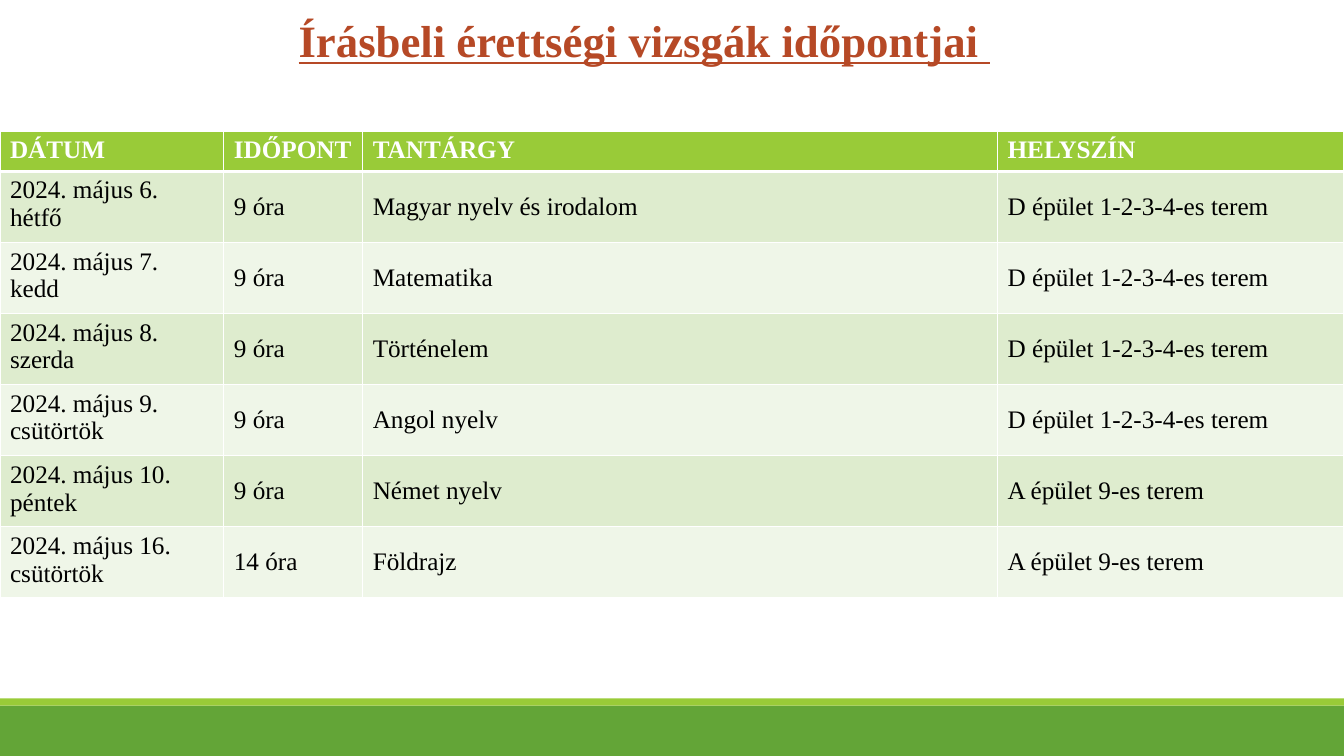
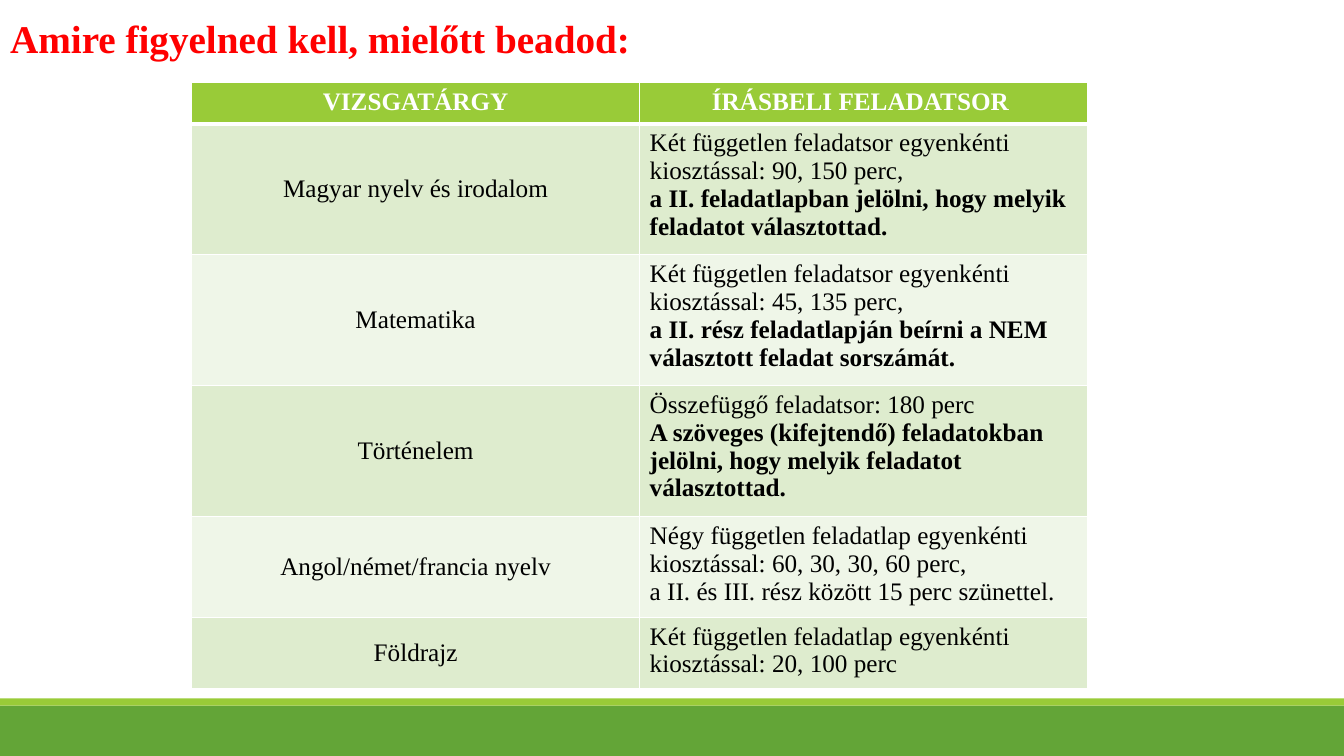
from dataclasses import dataclass

from pptx import Presentation
from pptx.dml.color import RGBColor
from pptx.enum.shapes import MSO_SHAPE
from pptx.enum.text import MSO_ANCHOR, MSO_AUTO_SIZE, PP_ALIGN
from pptx.oxml import parse_xml
from pptx.oxml.ns import nsdecls
from pptx.presentation import Presentation as Deck
from pptx.slide import Slide
from pptx.table import _Cell
from pptx.text.text import _Paragraph
from pptx.util import Cm, Pt


@dataclass(frozen=True)
class Theme:
    font: str = "Times New Roman"
    white: str = "FFFFFF"
    black: str = "000000"
    rust: str = "B64926"
    red: str = "FF0000"
    green: str = "63A537"
    lime: str = "99CB38"
    rows: tuple[str, str] = ("DEECCE", "EFF6E8")
    large: int = 32
    medium: int = 28
    body: int = 18
    thin: int = 1
    thick: int = 3


@dataclass(frozen=True)
class Band:
    top: float
    height: float
    color: str


@dataclass(frozen=True)
class Title:
    text: str
    box: tuple[float, float, float, float]
    size: int
    color: str
    after: int
    under: bool = False


@dataclass(frozen=True)
class Column:
    head: str
    width: float
    anchor: MSO_ANCHOR = MSO_ANCHOR.MIDDLE
    align: PP_ALIGN = PP_ALIGN.LEFT
    head_align: PP_ALIGN = PP_ALIGN.LEFT


@dataclass(frozen=True)
class Entry:
    """Cell text with an optional second paragraph, which may be bold."""
    text: str
    more: str = ""
    bold: bool = False


@dataclass(frozen=True)
class Grid:
    left: float
    top: float
    columns: list[Column]
    heights: list[float]
    rows: list[list[Entry]]


THEME = Theme()
WIDTH, HEIGHT = 33.87, 19.05
BANDS = [Band(17.78, 1.27, THEME.green), Band(17.6, 0.18, THEME.lime)]

DATES = Title("Írásbeli érettségi vizsgák időpontjai ", (7.27, 0, 18.4, 1.7),
              THEME.large, THEME.rust, after=10, under=True)
ADVICE = Title("Amire figyelned kell, mielőtt beadod:", (0, 0.05, 16.3, 1.52),
               THEME.medium, THEME.red, after=12)

HALL_D, HALL_A = "D épület 1-2-3-4-es terem", "A épület 9-es terem"
EXAMS = [
    (6, "hétfő", 9, "Magyar nyelv és irodalom", HALL_D),
    (7, "kedd", 9, "Matematika", HALL_D),
    (8, "szerda", 9, "Történelem", HALL_D),
    (9, "csütörtök", 9, "Angol nyelv", HALL_D),
    (10, "péntek", 9, "Német nyelv", HALL_A),
    (16, "csütörtök", 14, "Földrajz", HALL_A),
]
TIMES = Grid(
    0, 3.3,
    [Column("DÁTUM", 5.64, MSO_ANCHOR.TOP), Column("IDŐPONT", 3.5),
     Column("TANTÁRGY", 16), Column("HELYSZÍN", 8.73)],
    [1.02] + [1.79] * len(EXAMS),
    [[Entry(f"2024. május {day}.", name), Entry(f"{hour} óra"), Entry(topic), Entry(hall)]
     for day, name, hour, topic, hall in EXAMS],
)
PAPERS = Grid(
    4.83, 2.08,
    [Column("VIZSGATÁRGY", 11.29, align=PP_ALIGN.CENTER, head_align=PP_ALIGN.CENTER),
     Column("ÍRÁSBELI FELADATSOR ", 11.29, MSO_ANCHOR.TOP, head_align=PP_ALIGN.CENTER)],
    [1.04, 3.3, 3.3, 3.3, 2.54, 1.78],
    [
        [Entry("Magyar nyelv és irodalom"),
         Entry("Két független feladatsor egyenkénti kiosztással: 90, 150 perc,",
               "a II. feladatlapban jelölni, hogy melyik feladatot választottad.", True)],
        [Entry("Matematika"),
         Entry("Két független feladatsor egyenkénti kiosztással: 45, 135 perc,",
               "a II. rész feladatlapján beírni a NEM választott feladat sorszámát.", True)],
        [Entry("Történelem"),
         Entry("Összefüggő feladatsor: 180 perc",
               "A szöveges (kifejtendő) feladatokban jelölni, "
               "hogy melyik feladatot választottad.", True)],
        [Entry("Angol/német/francia nyelv"),
         Entry("Négy független feladatlap egyenkénti kiosztással: 60, 30, 30, 60 perc,",
               "a II. és III. rész között 15 perc szünettel.")],
        [Entry("Földrajz"),
         Entry("Két független feladatlap egyenkénti kiosztással: 20, 100 perc")],
    ],
)


def add_run(para: _Paragraph, text: str, size: int, color: str,
            bold: bool = False, under: bool = False) -> None:
    run = para.add_run()
    run.text = text
    font = run.font
    font.name, font.size = THEME.font, Pt(size)
    font.bold, font.underline = bold, under
    font.color.rgb = RGBColor.from_string(color)


def add_bands(deck: Deck, slide: Slide) -> None:
    """Draw the bands on a slide, then move them to the master for all slides."""
    tree = deck.slide_master.shapes.element
    for num, band in enumerate(BANDS):
        shape = slide.shapes.add_shape(
            MSO_SHAPE.RECTANGLE, 0, Cm(band.top), Cm(WIDTH), Cm(band.height))
        shape.shadow.inherit = False
        shape.fill.solid()
        shape.fill.fore_color.rgb = RGBColor.from_string(band.color)
        shape.line.fill.background()
        shape.element.xpath(".//p:cNvPr")[0].set("id", str(100 + num))
        tree.insert(2 + num, shape.element)


def set_title(slide: Slide, title: Title) -> None:
    shape = slide.shapes.title
    shape.left, shape.top, shape.width, shape.height = map(Cm, title.box)
    frame = shape.text_frame
    frame.word_wrap = True
    frame.auto_size = MSO_AUTO_SIZE.NONE
    frame.vertical_anchor = MSO_ANCHOR.TOP
    para = frame.paragraphs[0]
    para.alignment = PP_ALIGN.JUSTIFY
    para.line_spacing, para.space_after = 1.15, Pt(title.after)
    add_run(para, title.text, title.size, title.color, True, title.under)


def set_look(cell: _Cell, row: int) -> None:
    """Set the borders and fill that a cell has in the given row."""
    props = cell._tc.get_or_add_tcPr()
    widths = {"L": THEME.thin, "R": THEME.thin,
              "T": THEME.thick if row == 1 else THEME.thin,
              "B": THEME.thick if row == 0 else THEME.thin}
    for side, width in widths.items():
        props.append(parse_xml(
            f'<a:ln{side} {nsdecls("a")} w="{Pt(width)}"><a:solidFill>'
            f'<a:srgbClr val="{THEME.white}"/></a:solidFill></a:ln{side}>'))
    color = THEME.rows[(row - 1) % 2] if row else THEME.lime
    cell.fill.solid()
    cell.fill.fore_color.rgb = RGBColor.from_string(color)


def set_entry(cell: _Cell, entry: Entry, align: PP_ALIGN) -> None:
    frame = cell.text_frame
    para = frame.paragraphs[0]
    para.alignment = align
    add_run(para, entry.text, THEME.body, THEME.black)
    if entry.more:
        para = frame.add_paragraph()
        para.alignment = align
        add_run(para, entry.more, THEME.body, THEME.black, entry.bold)


def add_grid(slide: Slide, grid: Grid) -> None:
    width = sum(col.width for col in grid.columns)
    table = slide.shapes.add_table(
        len(grid.heights), len(grid.columns), Cm(grid.left), Cm(grid.top),
        Cm(width), Cm(sum(grid.heights))).table
    table.horz_banding = False
    for row, height in zip(table.rows, grid.heights):
        row.height = Cm(height)
    for x, col in enumerate(grid.columns):
        table.columns[x].width = Cm(col.width)
        head = table.cell(0, x)
        set_look(head, 0)
        para = head.text_frame.paragraphs[0]
        para.alignment = col.head_align
        add_run(para, col.head, THEME.body, THEME.white, True)
        for y, entries in enumerate(grid.rows, start=1):
            cell = table.cell(y, x)
            set_look(cell, y)
            cell.vertical_anchor = col.anchor
            set_entry(cell, entries[x], col.align)


def main() -> None:
    deck = Presentation()
    deck.slide_width, deck.slide_height = Cm(WIDTH), Cm(HEIGHT)
    layout = deck.slide_layouts.get_by_name("Title Only")
    for title, grid in ((DATES, TIMES), (ADVICE, PAPERS)):
        slide = deck.slides.add_slide(layout)
        set_title(slide, title)
        add_grid(slide, grid)
    add_bands(deck, deck.slides[0])
    deck.save("out.pptx")


if __name__ == "__main__":
    main()
